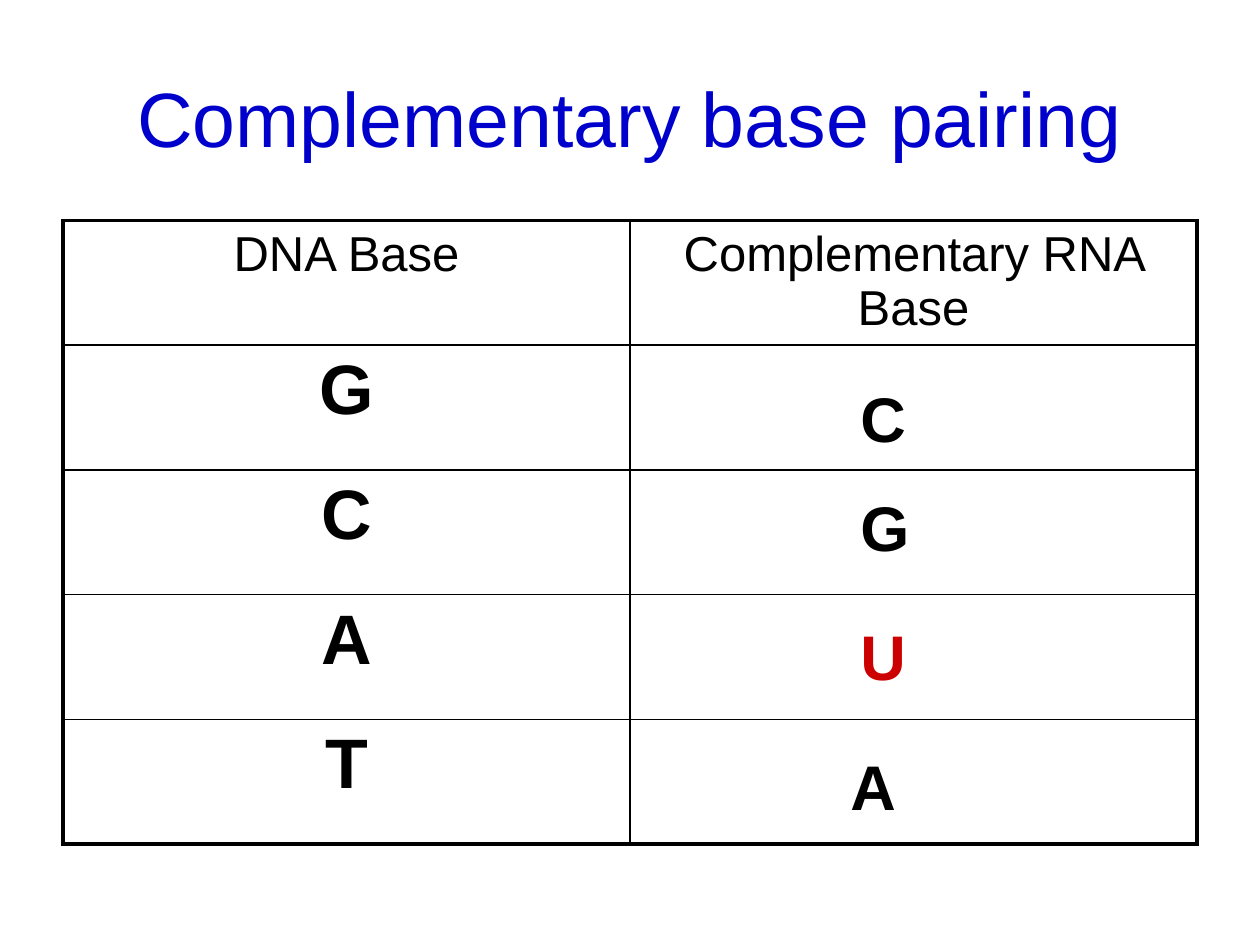
from lxml.etree import SubElement
from pptx import Presentation
from pptx.dml.color import RGBColor
from pptx.enum.text import MSO_ANCHOR as Anchor, PP_ALIGN as Align
from pptx.oxml.ns import qn
from pptx.util import Inches, Pt

WIDTH, HEIGHT = 10, 7.5
BLACK, BLUE, RED = "000000", "0000CC", "CC0000"
HEADINGS = ("DNA Base", "Complementary RNA Base")
DNA_BASES = ("G", "C", "A", "T")
RNA_BASES = (
    ("C", BLACK, (6.73, 2.96, 0.71, 0.7)),
    ("G", BLACK, (6.73, 3.83, 0.79, 0.7)),
    ("U", RED, (6.73, 4.85, 0.87, 0.7)),
    ("A", BLACK, (6.65, 5.88, 0.79, 0.7)),
)


def color(value):
    """Turn a hex string into a colour."""
    return RGBColor.from_string(value)


def write(frame, text, size, hue=BLACK, bold=False, align=Align.CENTER):
    """Write one formatted paragraph into a text frame."""
    para = frame.paragraphs[0]
    para.alignment = align
    para.space_before = Pt(0)
    span = para.add_run()
    span.text = text
    formats = {"name": "Arial", "size": Pt(size), "bold": bold}
    for name, value in formats.items():
        setattr(span.font, name, value)
    span.font.color.rgb = color(hue)


def add_borders(cell, widths):
    """Draw the left, right, top and bottom borders of a cell."""
    properties = cell._tc.get_or_add_tcPr()
    for side, width in zip("LRTB", widths):
        line = SubElement(properties, qn(f"a:ln{side}"), w=str(Pt(width)))
        fill = SubElement(line, qn("a:solidFill"))
        SubElement(fill, qn("a:srgbClr"), val=BLACK)


def place_title(page, box):
    """Place the slide title."""
    title = page.shapes.title
    for name, value in zip(("left", "top", "width", "height"), box):
        setattr(title, name, Inches(value))
    title.text_frame.vertical_anchor = Anchor.MIDDLE
    write(title.text_frame, "Complementary base pairing", 44, BLUE)


def place_table(page, box):
    """Place the base table with a thick frame and thin inner rules."""
    rows, columns = len(DNA_BASES) + 1, len(HEADINGS)
    table = page.shapes.add_table(rows, columns, *map(Inches, box)).table
    table.first_row = table.horz_banding = False
    for row in range(rows):
        for column in range(columns):
            cell = table.cell(row, column)
            edges = (column == 0, column == columns - 1, row == 0, row == rows - 1)
            add_borders(cell, [2.25 if edge else 1 for edge in edges])
            cell.fill.background()
            if row == 0:
                write(cell.text_frame, HEADINGS[column], 28)
            elif column == 0:
                write(cell.text_frame, DNA_BASES[row - 1], 40, bold=True)


def place_answer(page, base, hue, box):
    """Place one RNA base over the table."""
    frame = page.shapes.add_textbox(*map(Inches, box)).text_frame
    frame.word_wrap = True
    write(frame, base, 36, hue, True, Align.LEFT)


def main():
    """Build and save the deck."""
    deck = Presentation()
    deck.slide_width, deck.slide_height = Inches(WIDTH), Inches(HEIGHT)
    page = deck.slides.add_slide(deck.slide_layouts[5])
    margin, span = WIDTH * 0.05, WIDTH * 0.9
    place_title(page, (margin, HEIGHT * 0.04, span, 1.25))
    place_table(page, (margin, 1.75, span, HEIGHT * 0.66))
    for base, hue, box in RNA_BASES:
        place_answer(page, base, hue, box)
    deck.save("out.pptx")


if __name__ == "__main__":
    main()
